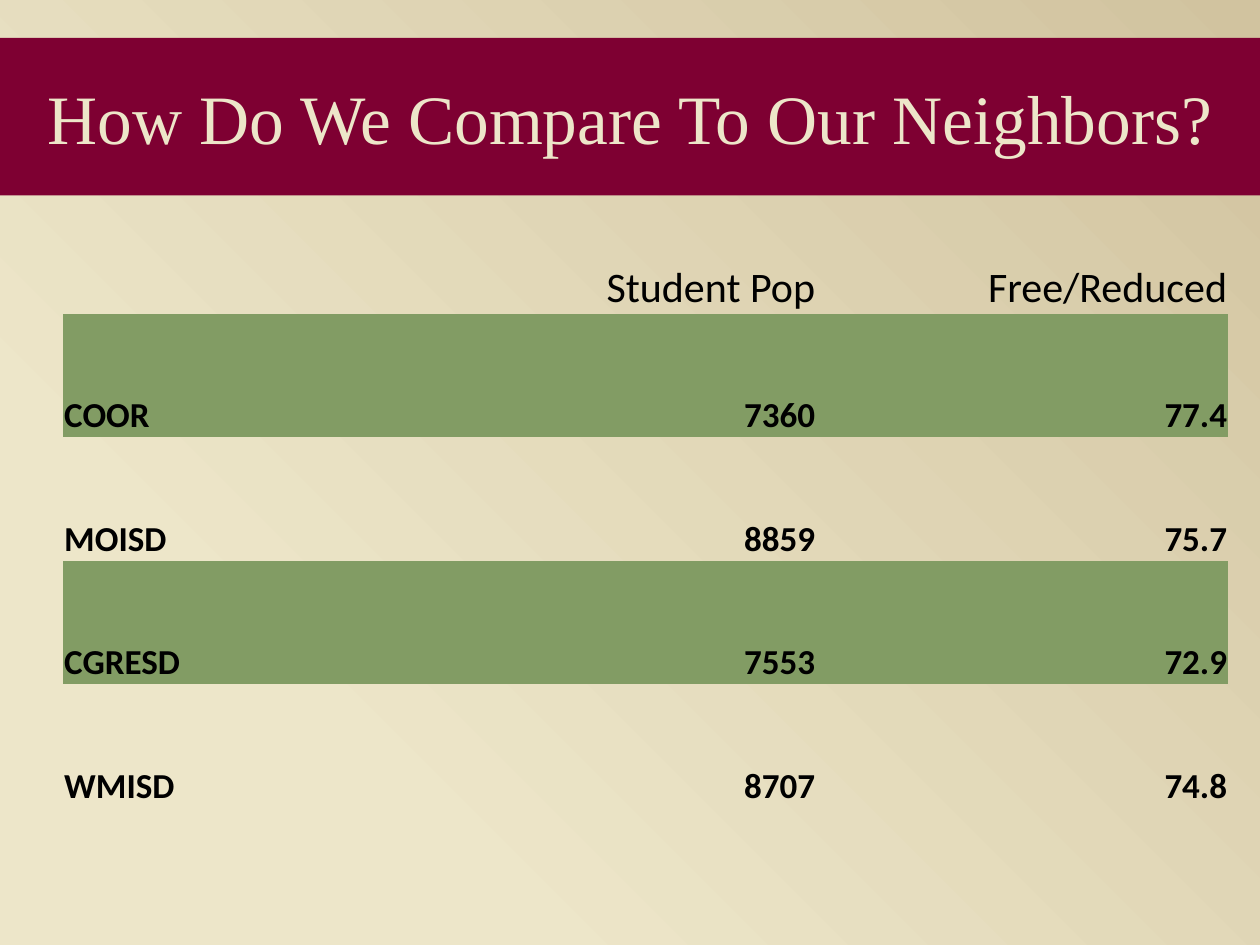
from pptx import Presentation
from pptx.dml.color import RGBColor
from pptx.enum.shapes import MSO_SHAPE
from pptx.enum.text import MSO_ANCHOR, PP_ALIGN
from pptx.oxml.ns import qn
from pptx.util import Inches, Pt

CREAM = RGBColor(0xED, 0xE6, 0xC9)
SAND = RGBColor(0xD1, 0xC3, 0x9F)
WINE = RGBColor(0x7E, 0x00, 0x32)
GREEN = RGBColor(0x82, 0x9C, 0x64)
BLACK = RGBColor(0, 0, 0)
NO_GRID = "{2D5ABB26-0587-4C30-8999-92F81FD0307C}"

TITLE = {"name": "Times New Roman", "size": Pt(39.6)}
HEAD = {"name": "Calibri", "size": Pt(24), "bold": False}
BODY = {"name": "Calibri", "size": Pt(20), "bold": True}
CELL = {
    "margin_left": Inches(0.01),
    "margin_right": Inches(0.01),
    "margin_top": Inches(0.01),
    "margin_bottom": 0,
    "vertical_anchor": MSO_ANCHOR.BOTTOM,
}

ROWS = [
    ("", "Student Pop", "Free/Reduced"),
    ("COOR", "7360", "77.4"),
    ("MOISD", "8859", "75.7"),
    ("CGRESD", "7553", "72.9"),
    ("WMISD", "8707", "74.8"),
]
WIDTHS = (3.11, 2.87, 3.27)
HEIGHTS = (1.16, 0.98, 0.98, 0.98, 0.98)


def put(item, values):
    for key, value in values.items():
        setattr(item, key, value)


class Page:
    def __init__(self, slide, ink):
        self.slide = slide
        self.ink = ink

    def back(self, stops, angle):
        fill = self.slide.background.fill
        fill.gradient()
        fill.gradient_angle = angle
        for stop, (place, color) in zip(fill.gradient_stops, stops):
            stop.position = place
            stop.color.rgb = color

    def label(self, frame, text, font, align, color):
        para = frame.paragraphs[0]
        para.alignment = align
        put(para.font, font)
        if text:
            run = para.add_run()
            run.text = text
            put(run.font, font)
            run.font.color.rgb = color

    def band(self, text, box, fill, color):
        shape = self.slide.shapes.add_shape(
            MSO_SHAPE.RECTANGLE, *map(Inches, box))
        shape.shadow.inherit = False
        shape.fill.solid()
        shape.fill.fore_color.rgb = fill
        shape.line.fill.background()
        frame = shape.text_frame
        put(frame, {"word_wrap": True, "vertical_anchor": MSO_ANCHOR.MIDDLE})
        self.label(frame, text, TITLE, PP_ALIGN.CENTER, color)

    def table(self, rows, left, top, widths, heights, stripe):
        frame = self.slide.shapes.add_table(
            len(rows), len(widths), Inches(left), Inches(top),
            Inches(sum(widths)), Inches(sum(heights)))
        for style in frame.element.iter(qn("a:tableStyleId")):
            style.text = NO_GRID
        table = frame.table
        put(table, {"first_row": False, "horz_banding": False})
        for col, width in zip(table.columns, widths):
            col.width = Inches(width)
        for r, (row, height) in enumerate(zip(rows, heights)):
            table.rows[r].height = Inches(height)
            for c, text in enumerate(row):
                cell = table.cell(r, c)
                put(cell, CELL)
                # Every second row is striped
                if r % 2:
                    cell.fill.solid()
                    cell.fill.fore_color.rgb = stripe
                else:
                    cell.fill.background()
                self.label(cell.text_frame, text, BODY if r else HEAD,
                           PP_ALIGN.RIGHT if c else PP_ALIGN.LEFT, self.ink)


def main():
    deck = Presentation()
    put(deck, {"slide_width": Inches(10), "slide_height": Inches(7.5)})
    page = Page(deck.slides.add_slide(deck.slide_layouts[6]), BLACK)

    # Background
    page.back([(0.24, CREAM), (1, SAND)], 45)

    # Title band
    page.band("How Do We Compare To Our Neighbors?",
              (0, 0.3, 10, 1.25), WINE, CREAM)

    # District figures
    page.table(ROWS, 0.5, 1.33, WIDTHS, HEIGHTS, GREEN)

    deck.save("out.pptx")


if __name__ == "__main__":
    main()
